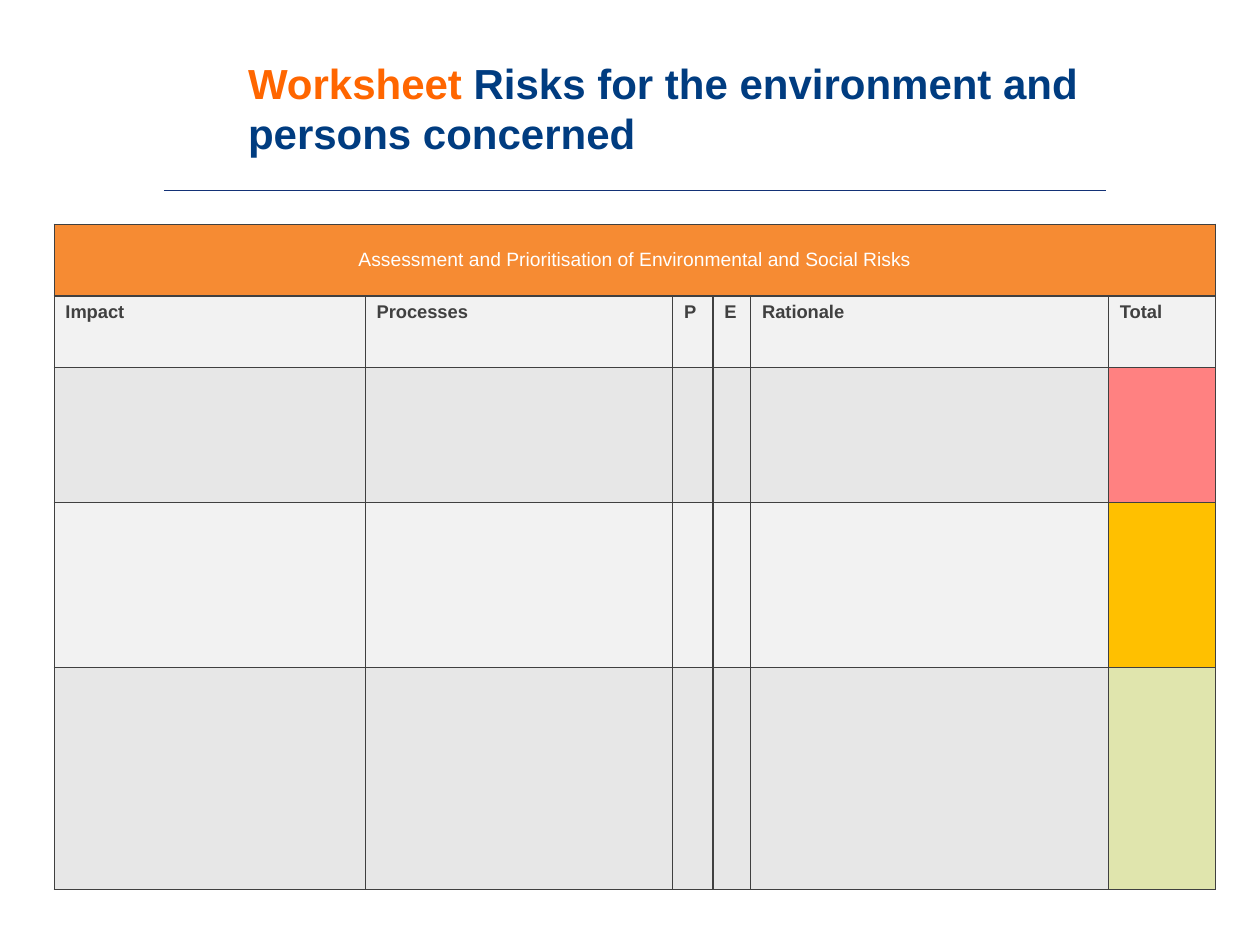
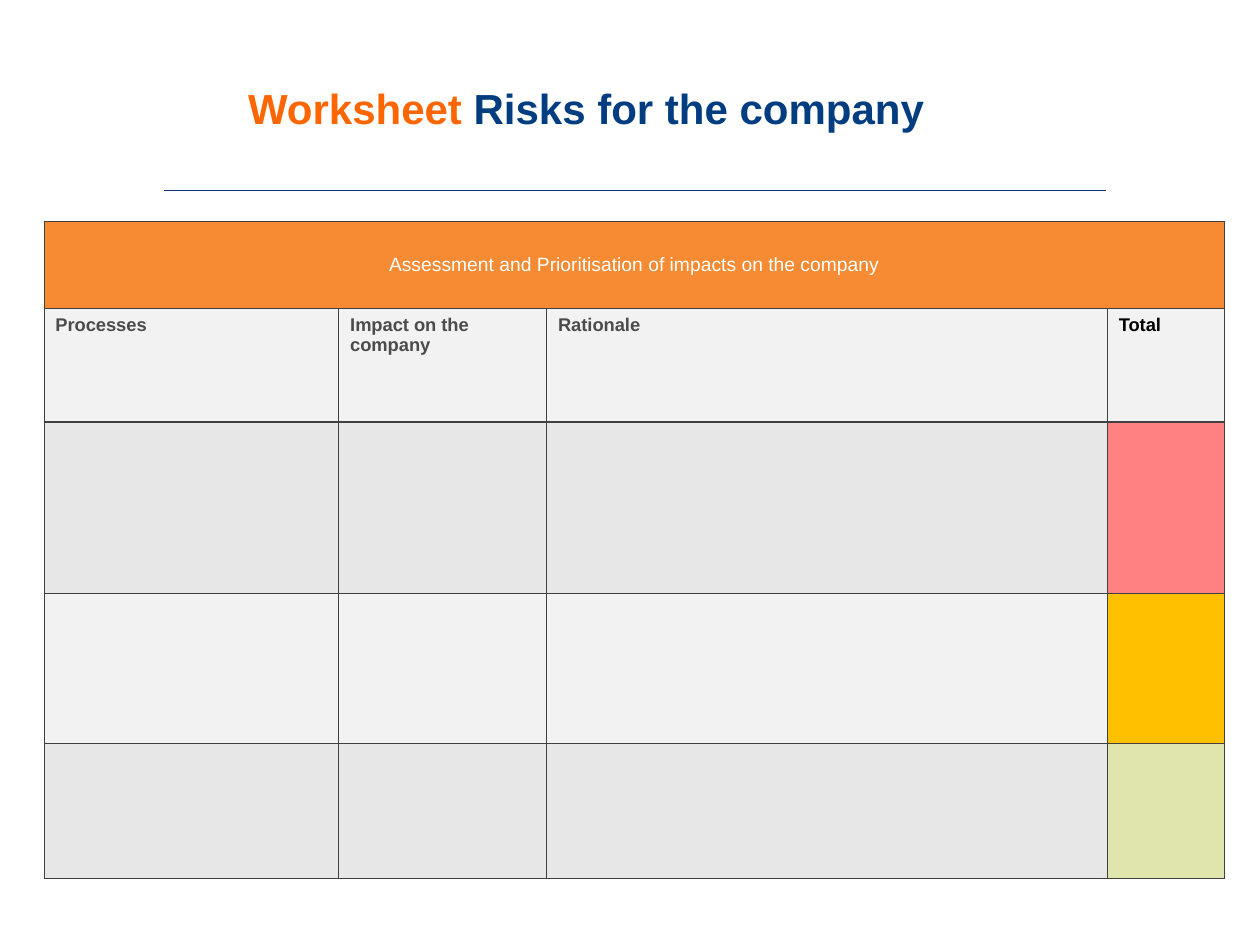
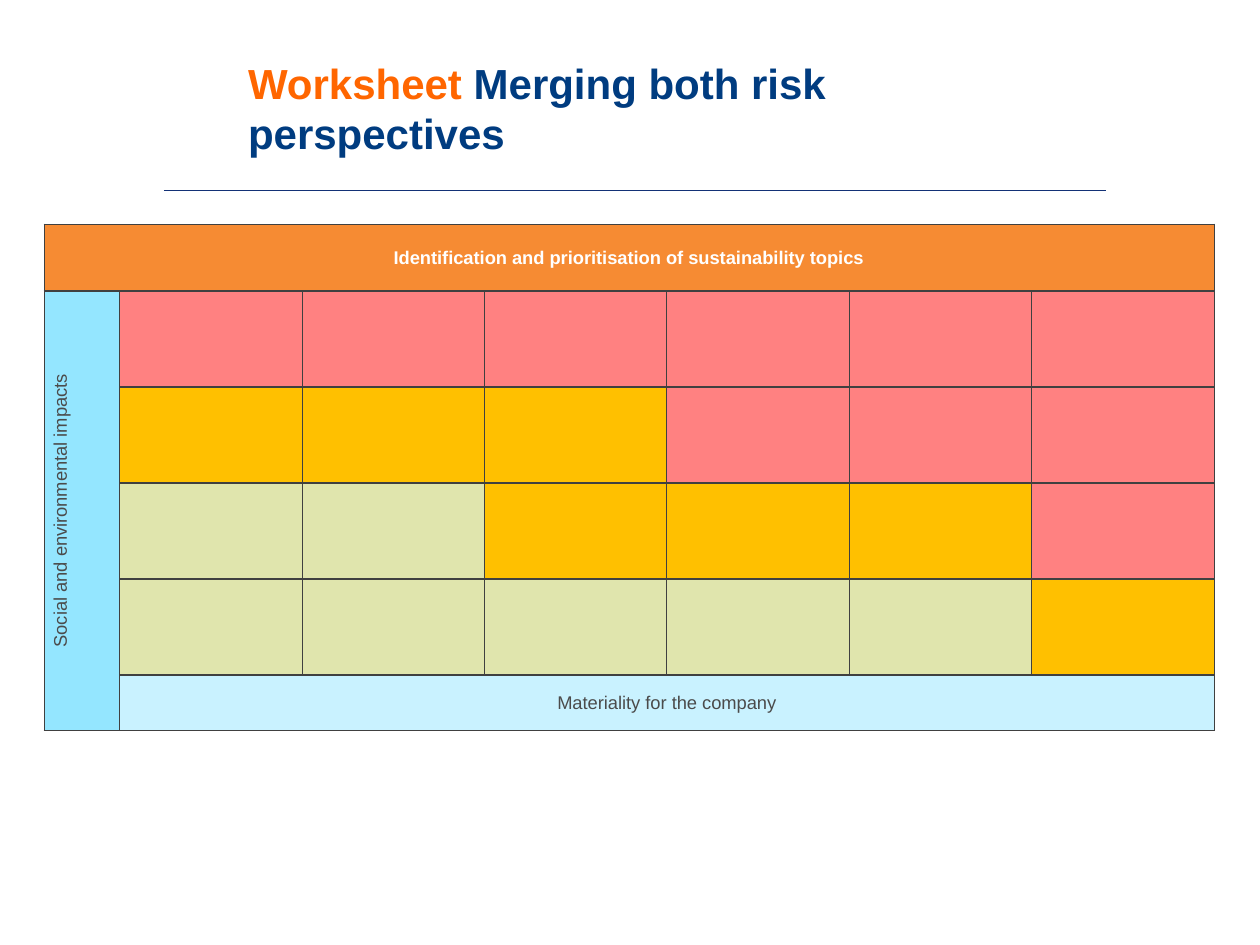
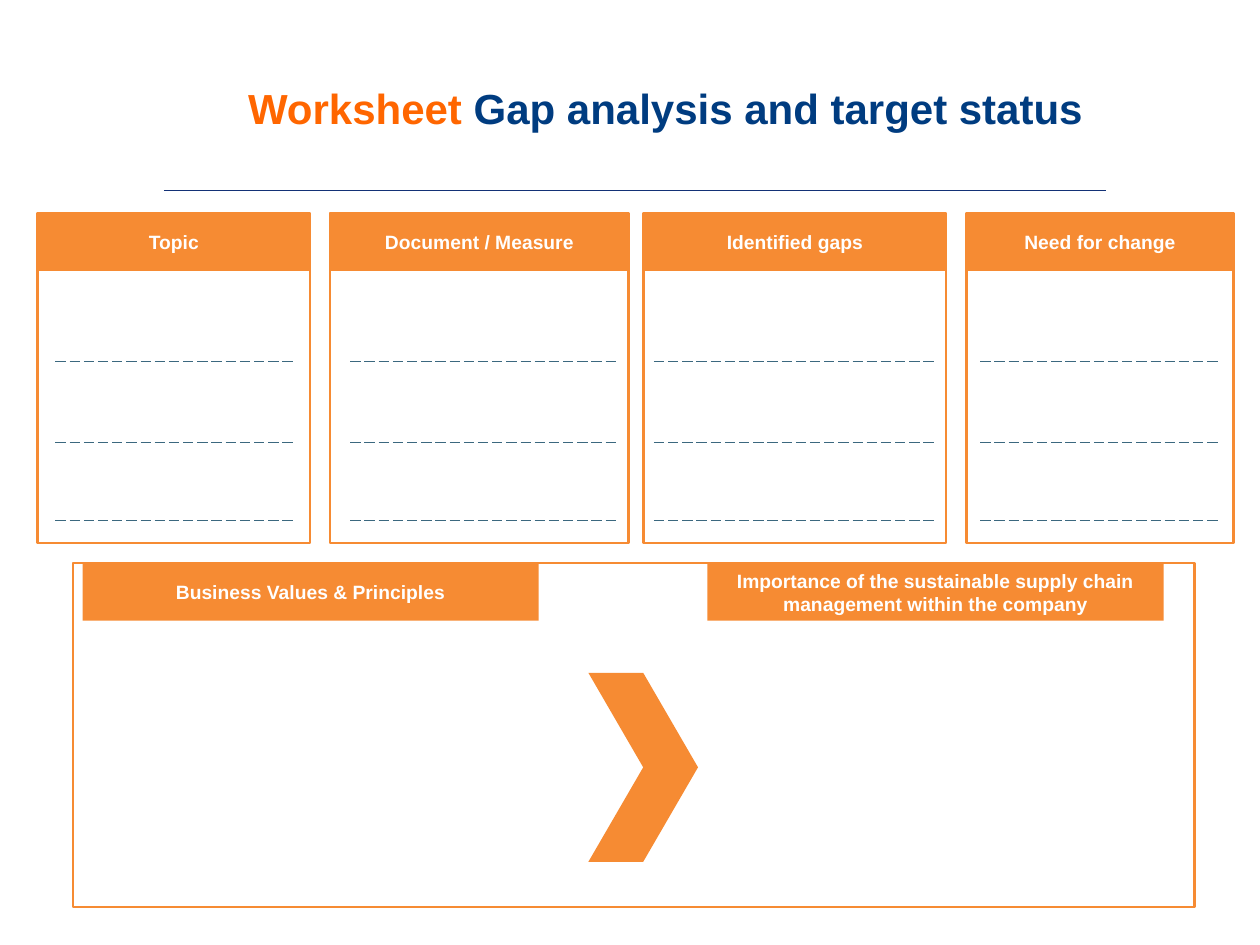
"""Build four supply chain risk worksheets on a grid of 100 columns by 75 rows."""
from dataclasses import dataclass
from lxml.etree import SubElement
from pptx import Presentation
from pptx.dml.color import RGBColor
from pptx.enum.dml import MSO_LINE
from pptx.enum.shapes import MSO_CONNECTOR, MSO_SHAPE as Preset
from pptx.enum.text import MSO_ANCHOR as Anchor, PP_ALIGN as Align
from pptx.oxml.ns import qn
from pptx.util import Emu, Inches, Pt


@dataclass(frozen=True)
class Theme:
    font: str = "Arial"
    title_size: float = 24
    header_size: float = 11
    cell_size: float = 10.5
    hairline: float = 0.75
    outline: float = 1.5
    accent: str = "FF6600"
    navy: str = "003C80"
    rule: str = "133176"
    dash: str = "3B687F"
    orange: str = "F68B33"
    white: str = "FFFFFF"
    black: str = "000000"
    border: str = "404040"
    grey_text: str = "4B4B4B"
    light: str = "F2F2F2"
    grey: str = "E7E7E7"
    red: str = "FF8181"
    amber: str = "FFC000"
    green: str = "E0E5AD"
    blue: str = "94E6FF"
    pale_blue: str = "C9F2FF"


theme = Theme()
deck = Presentation()
deck.slide_width, deck.slide_height = Inches(10), Inches(7.5)


def grid(*cells):
    return [Emu(round(cell * deck.slide_width / 100)) for cell in cells]


def write(frame, text, size=theme.cell_size, color=theme.grey_text, bold=False,
          align=Align.LEFT, anchor=Anchor.TOP):
    frame.word_wrap = True
    frame.vertical_anchor = anchor
    para = frame.paragraphs[0]
    para.alignment = align
    span = para.add_run()
    span.text = text
    span.font.name, span.font.size, span.font.bold = theme.font, Pt(size), bold
    span.font.color.rgb = RGBColor.from_string(color)


titles = ["Risks for the environment and persons concerned", "Risks for the company",
          "Merging both risk perspectives", "Gap analysis and target status"]
pages = []
strokes = []
for title in titles:
    page = deck.slides.add_slide(deck.slide_layouts[6])
    pages.append(page)
    frame = page.shapes.add_textbox(*grid(18.7, 3, 69.1, 11.1)).text_frame
    frame.margin_right = Inches(0.15)
    for text, color in (("Worksheet ", theme.accent), (title, theme.navy)):
        write(frame, text, size=theme.title_size, color=color, bold=True, anchor=Anchor.MIDDLE)
    strokes.append((page, 13, 87.8, 15.1, theme.rule, MSO_LINE.SOLID))

fills = {"O": theme.orange, "L": theme.light, "G": theme.grey, "R": theme.red, "A": theme.amber,
         "E": theme.green, "B": theme.blue, "P": theme.pale_blue}
centred = dict(align=Align.CENTER, anchor=Anchor.MIDDLE)
banner = dict(size=theme.header_size, color=theme.white, **centred)
heading = dict(color=theme.border, bold=True)
company_heading = dict(heading, color=theme.grey_text)
risk_heads = ["Impact", "Processes", "P", "E", "Rationale", "Total"]
company_heads = ["Processes", "Impact on the company", "Rationale"]

tables = [
    dict(left=4.3, top=17.8, columns=[24.7, 24.4, 3.2, 3, 28.4, 8.5],
         rows=[5.7, 5.7, 10.7, 13.1, 17.6],
         pattern=["OOOOOO", "LLLLLL", "GGGGGR", "LLLLLA", "GGGGGE"],
         merges=[(0, 0, 0, 5)],
         texts=[(0, 0, "Assessment and Prioritisation of Environmental and Social Risks", banner)]
         + [(1, column, head, heading) for column, head in enumerate(risk_heads)]),
    dict(left=3.5, top=17.6, columns=[23.4, 16.5, 44.5, 9.3],
         rows=[6.9, 9, 13.6, 11.9, 10.7],
         pattern=["OOOO", "LLLL", "GGGR", "LLLA", "GGGE"],
         merges=[(0, 0, 0, 3)],
         texts=[(0, 0, "Assessment and Prioritisation of impacts on the company", banner)]
         + [(1, column, head, company_heading) for column, head in enumerate(company_heads)]
         + [(1, 3, "Total", dict(heading, color=theme.black))]),
    dict(left=3.5, top=17.8, columns=[6] + [14.48] * 6, rows=[5.3] + [7.62] * 4 + [4.4],
         pattern=["OOOOOOO", "BRRRRRR", "BAAARRR", "BEEAAAR", "BEEEEEA", "BPPPPPP"],
         merges=[(0, 0, 0, 6), (1, 0, 5, 0), (5, 1, 5, 6)],
         texts=[(0, 0, "Identification and prioritisation of sustainability topics",
                 dict(banner, size=theme.cell_size, bold=True)),
                (1, 0, "Social and environmental impacts", dict(align=Align.CENTER)),
                (5, 1, "Materiality for the company", centred)]),
]

for page, plan in zip(pages, tables):
    columns, rows = plan["columns"], plan["rows"]
    table = page.shapes.add_table(
        len(rows), len(columns),
        *grid(plan["left"], plan["top"], sum(columns), sum(rows))).table
    table.first_row = table.horz_banding = False
    for column, width in zip(table.columns, grid(*columns)):
        column.width = width
    for row, height, letters in zip(table.rows, grid(*rows), plan["pattern"]):
        row.height = height
        for cell, letter in zip(row.cells, letters):
            cell.margin_left = cell.margin_right = Inches(0.09)
            properties = cell._tc.get_or_add_tcPr()
            for side in ("a:lnL", "a:lnR", "a:lnT", "a:lnB"):
                edge = SubElement(properties, qn(side), w=str(Pt(theme.hairline)))
                SubElement(SubElement(edge, qn("a:solidFill")), qn("a:srgbClr"), val=theme.border)
            cell.fill.solid()
            cell.fill.fore_color.rgb = RGBColor.from_string(fills[letter])
    for top, left, bottom, right in plan["merges"]:
        table.cell(top, left).merge(table.cell(bottom, right))
    for row, column, text, style in plan["texts"]:
        cell = table.cell(row, column)
        write(cell.text_frame, text, **{k: v for k, v in style.items() if k != "anchor"})
        cell.vertical_anchor = style.get("anchor", Anchor.TOP)
        if fills[plan["pattern"][row][column]] == theme.blue:
            cell._tc.get_or_add_tcPr().set("vert", "vert270")

gap_page = pages[3]
orange = theme.orange
boxes = [(Preset.RECTANGLE, 5.8, 44.7, 89, 27.3, None, orange, ""),
         (Preset.CHEVRON, 46.7, 53.4, 8.7, 15, orange, None, "")]
for left, text in ((6.55, "Business Values & Principles"),
                   (56.15, "Importance of the sustainable supply chain management "
                           "within the company")):
    boxes.append((Preset.RECTANGLE, left, 44.75, 36.2, 4.5, orange, None, text))
for text, left, width, start, end in (("Topic", 3, 21.6, 4.4, 23.3),
                                      ("Document / Measure", 26.2, 23.7, 27.8, 49.1),
                                      ("Identified gaps", 51.1, 24, 51.9, 74.3),
                                      ("Need for change", 76.7, 21.2, 77.8, 96.7)):
    boxes.append((Preset.RECTANGLE, left, 16.9, width, 4.5, orange, orange, text))
    boxes.append((Preset.RECTANGLE, left, 21.4, width, 21.7, theme.white, orange, ""))
    for height in (28.7, 35.1, 41.3):
        strokes.append((gap_page, start, end, height, theme.dash, MSO_LINE.LONG_DASH))

for preset, left, top, width, height, fill, outline, text in boxes:
    box = gap_page.shapes.add_shape(preset, *grid(left, top, width, height))
    box.shadow.inherit = False
    box.fill.background()
    box.line.fill.background()
    if fill:
        box.fill.solid()
        box.fill.fore_color.rgb = RGBColor.from_string(fill)
    if outline:
        box.line.color.rgb = RGBColor.from_string(outline)
        box.line.width = Pt(theme.outline)
    if text:
        box.text_frame.margin_top = box.text_frame.margin_bottom = Inches(0.04)
        write(box.text_frame, text, bold=True, **banner)

for page, start, end, height, color, dash in strokes:
    stroke = page.shapes.add_connector(MSO_CONNECTOR.STRAIGHT, *grid(start, height, end, height))
    stroke.line.color.rgb = RGBColor.from_string(color)
    stroke.line.width = Pt(theme.hairline)
    stroke.line.dash_style = dash
    SubElement(stroke._element.spPr, qn("a:effectLst"))

deck.save("out.pptx")
